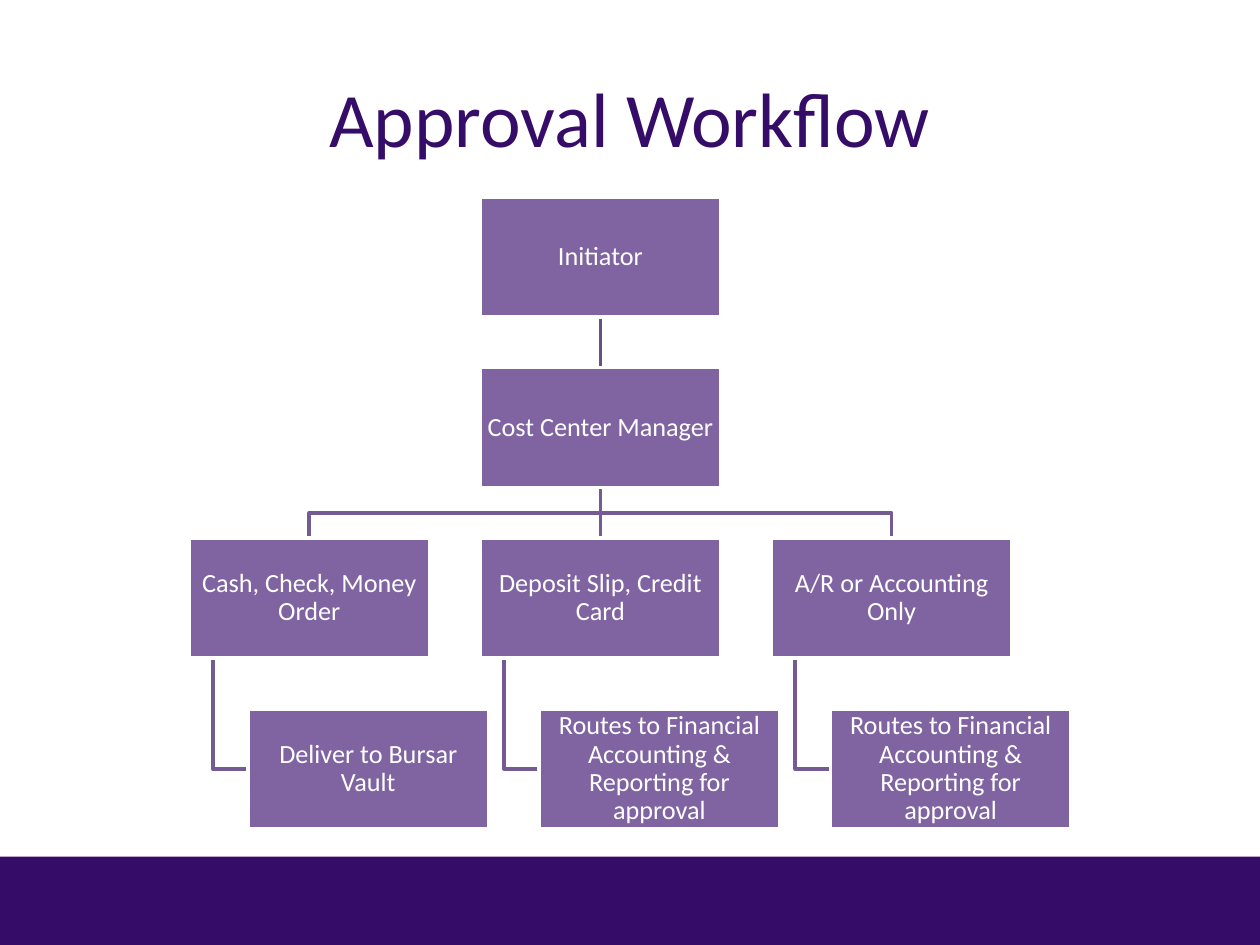
"""Builds the approval workflow slide as an organisation chart."""
import pptx
import pptx.dml.color
import pptx.enum.shapes
import pptx.enum.text
import pptx.oxml.ns
import pptx.util
from lxml import etree

Cm = pptx.util.Cm
Pt = pptx.util.Pt

TITLE = "Approval Workflow"
TRUNK = ["Initiator", "Cost Center Manager"]
BRANCHES = [
    ("Cash, Check, Money Order", "Deliver to Bursar Vault"),
    ("Deposit Slip, Credit Card", "Routes to Financial Accounting & Reporting for approval"),
    ("A/R or Accounting Only", "Routes to Financial Accounting & Reporting for approval"),
]

COLORS = {"brand": "350D68", "box": "8064A2", "white": "FFFFFF",
          "trunk_line": "675082", "branch_line": "745B93"}
FONT = "Calibri"
SLIDE_WIDTH, SLIDE_HEIGHT = 25.4, 19.05
BAR_TOP, BAR_HEIGHT = 17.27, 1.8
LEFT, TOP = 3.81, 3.97
BOX_WIDTH, BOX_HEIGHT = 4.85, 2.42
COLUMN_STEP, ROW_STEP = 5.87, 3.44
CHILD_INDENT, STEM_INDENT = 1.19, 0.48
MIDDLE_COLUMN = 1


def rgb(name):
    return pptx.dml.color.RGBColor.from_string(COLORS[name])


def column_left(column):
    return LEFT + column * COLUMN_STEP


def column_center(column):
    return column_left(column) + BOX_WIDTH / 2


def row_top(row):
    return TOP + row * ROW_STEP


def row_bottom(row):
    return row_top(row) + BOX_HEIGHT


def set_text(shape, text, size, color):
    frame = shape.text_frame
    frame.text = text
    frame.word_wrap = True
    frame.vertical_anchor = pptx.enum.text.MSO_ANCHOR.MIDDLE
    paragraph = frame.paragraphs[0]
    paragraph.alignment = pptx.enum.text.PP_ALIGN.CENTER
    font = paragraph.runs[0].font
    font.name, font.size = FONT, Pt(size)
    font.color.rgb = rgb(color)
    return frame


def add_rectangle(slide, left, top, width, height, fill):
    shape = slide.shapes.add_shape(pptx.enum.shapes.MSO_SHAPE.RECTANGLE,
                                   Cm(left), Cm(top), Cm(width), Cm(height))
    shape.shadow.inherit = False
    shape.fill.solid()
    shape.fill.fore_color.rgb = rgb(fill)
    shape.line.fill.background()
    return shape


def style_line(line, color):
    line.color.rgb = rgb(color)
    line.width = Pt(2)


def add_box(slide, text, left, row):
    shape = add_rectangle(slide, left, row_top(row), BOX_WIDTH, BOX_HEIGHT, "box")
    style_line(shape.line, "white")
    frame = set_text(shape, text, 15, "white")
    frame.margin_left = frame.margin_right = Cm(0.03)
    frame.margin_top = frame.margin_bottom = Cm(0.03)
    frame.paragraphs[0].line_spacing = 0.9


def add_straight(slide, x, top, bottom, color):
    connector = slide.shapes.add_connector(pptx.enum.shapes.MSO_CONNECTOR.STRAIGHT,
                                           Cm(x), Cm(top), Cm(x), Cm(bottom))
    style_line(connector.line, color)
    properties = connector._element.spPr
    etree.SubElement(properties, pptx.oxml.ns.qn("a:effectLst"))


def add_bent(slide, points):
    start, *rest = [(Cm(x), Cm(y)) for x, y in points]
    builder = slide.shapes.build_freeform(*start)
    builder.add_line_segments(rest, close=False)
    shape = builder.convert_to_shape()
    shape.shadow.inherit = False
    shape.fill.background()
    style_line(shape.line, "branch_line")


def add_links(slide):
    center = column_center(MIDDLE_COLUMN)
    branch_row = len(TRUNK)
    fork_top, fork_bottom = row_bottom(branch_row - 1), row_top(branch_row)
    fork_middle = (fork_top + fork_bottom) / 2
    child_middle = row_top(branch_row + 1) + BOX_HEIGHT / 2
    for column in range(len(BRANCHES)):
        stem = column_left(column) + STEM_INDENT
        add_bent(slide, [(stem, row_bottom(branch_row)), (stem, child_middle),
                         (column_left(column) + CHILD_INDENT, child_middle)])
        if column == MIDDLE_COLUMN:
            add_straight(slide, center, fork_top, fork_bottom, "branch_line")
        else:
            end = column_center(column)
            add_bent(slide, [(center, fork_top), (center, fork_middle),
                             (end, fork_middle), (end, fork_bottom)])
    for row in range(branch_row - 1):
        add_straight(slide, center, row_bottom(row), row_top(row + 1), "trunk_line")


def main():
    presentation = pptx.Presentation()
    presentation.slide_width, presentation.slide_height = Cm(SLIDE_WIDTH), Cm(SLIDE_HEIGHT)
    slide = presentation.slides.add_slide(presentation.slide_layouts[6])
    add_rectangle(slide, 0, BAR_TOP, SLIDE_WIDTH, BAR_HEIGHT, "brand")
    title = slide.shapes.add_textbox(Cm(1.27), Cm(0.76), Cm(22.86), Cm(3.18))
    set_text(title, TITLE, 44, "brand")

    add_links(slide)
    for row, text in enumerate(TRUNK):
        add_box(slide, text, column_left(MIDDLE_COLUMN), row)
    for column, (branch, child) in enumerate(BRANCHES):
        add_box(slide, branch, column_left(column), len(TRUNK))
        add_box(slide, child, column_left(column) + CHILD_INDENT, len(TRUNK) + 1)
    presentation.save("out.pptx")


if __name__ == "__main__":
    main()
